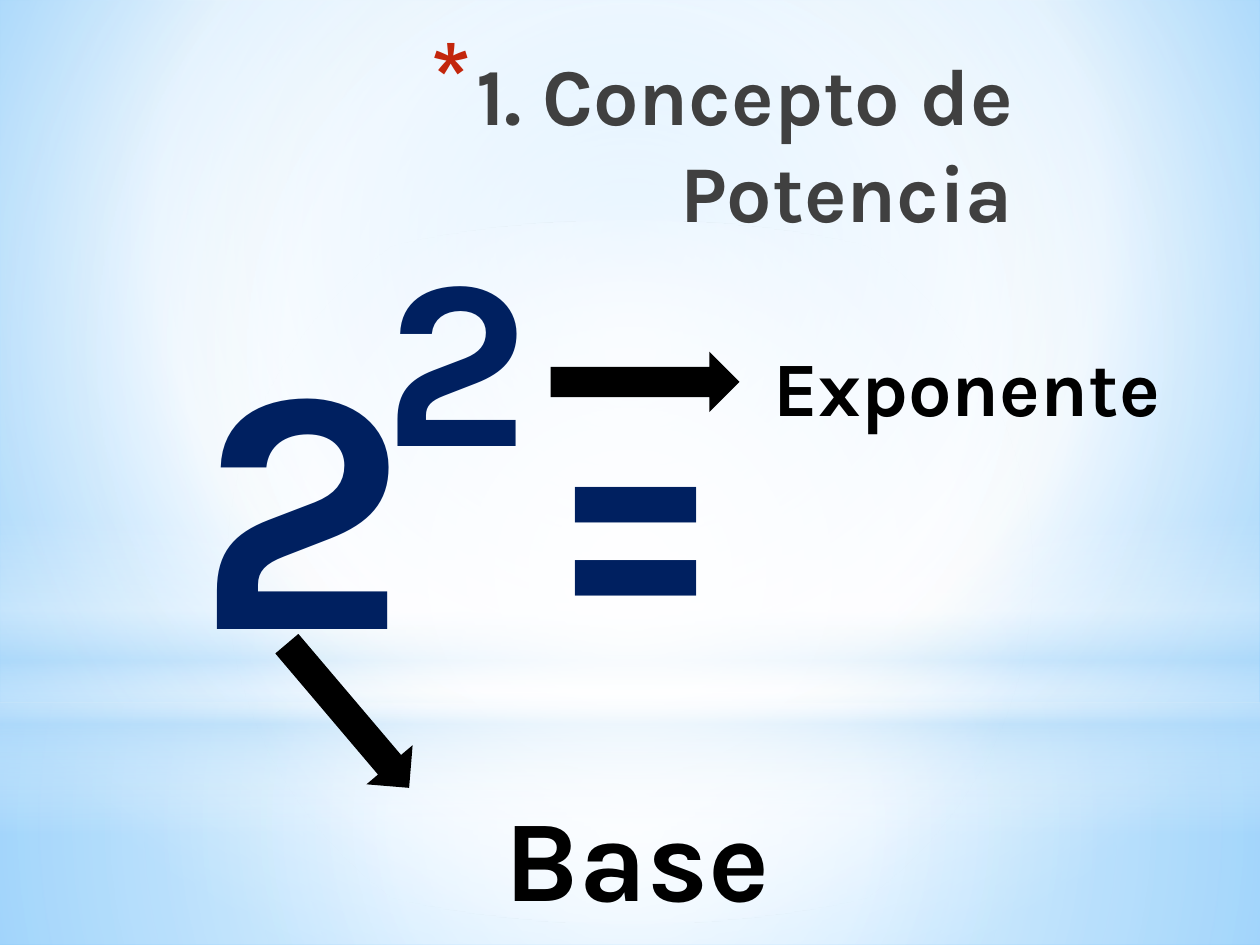
from lxml.etree import SubElement
from pptx import Presentation
from pptx.dml.color import RGBColor
from pptx.enum.shapes import MSO_SHAPE
from pptx.enum.text import MSO_ANCHOR, MSO_AUTO_SIZE, PP_ALIGN
from pptx.oxml.ns import qn
from pptx.util import Cm, Pt

COLORS = {
    "white": "FFFFFF",
    "pale": "B4DCFA",
    "sky": "9ED5FF",
    "azure": "5BB9FF",
    "gray": "404040",
    "red": "C3260C",
    "navy": "002060",
    "black": "000000",
}
WIDTH, HEIGHT = 25.4, 19.05
HORIZON = 14.17
CENTER = (50, 50, 50, 50)


class SlideBuilder:
    font = "Karla"

    def __init__(self, deck):
        self.page = deck.slides.add_slide(deck.slide_layouts[6])

    def color(self, name):
        return RGBColor.from_string(COLORS[name])

    def gradient(self, owner, fill, stops, focus=None):
        fill.solid()
        solid = next(owner.iter(qn("a:solidFill")))
        grad = SubElement(solid.getparent(), qn("a:gradFill"), rotWithShape="1")
        stop_list = SubElement(grad, qn("a:gsLst"))
        for position, name, alpha in stops:
            stop = SubElement(stop_list, qn("a:gs"), pos=str(position * 1000))
            tint = SubElement(stop, qn("a:srgbClr"), val=COLORS[name])
            if alpha < 100:
                SubElement(tint, qn("a:alpha"), val=str(alpha * 1000))
        if focus:
            route = SubElement(grad, qn("a:path"), path="circle")
            edges = {side: str(value * 1000) for side, value in zip("ltrb", focus)}
            SubElement(route, qn("a:fillToRect"), **edges)
        else:
            SubElement(grad, qn("a:lin"), ang="5400000", scaled="0")
        solid.getparent().replace(solid, grad)

    def background(self, stops, focus):
        self.gradient(self.page.element, self.page.background.fill, stops, focus)

    def shape(self, kind, left, top, width, height):
        shape = self.page.shapes.add_shape(
            kind, Cm(left), Cm(top), Cm(width), Cm(height)
        )
        shape.shadow.inherit = False
        shape.line.fill.background()
        return shape

    def glow(self, kind, top, height, stops, focus=None):
        shape = self.shape(kind, 0, top, WIDTH, height)
        self.gradient(shape.element, shape.fill, stops, focus)

    def arrow(self, left, top, rotation=0):
        shape = self.shape(MSO_SHAPE.RIGHT_ARROW, left, top, 3.81, 1.22)
        shape.fill.solid()
        shape.fill.fore_color.rgb = self.color("black")
        shape.rotation = rotation

    def text(self, words, left, top, width, height, size, color,
             align=PP_ALIGN.LEFT, fit=MSO_AUTO_SIZE.SHAPE_TO_FIT_TEXT):
        box = self.page.shapes.add_textbox(Cm(left), Cm(top), Cm(width), Cm(height))
        frame = box.text_frame
        frame.word_wrap = True
        frame.auto_size = fit
        frame.vertical_anchor = MSO_ANCHOR.TOP
        frame.text = words
        para = frame.paragraphs[0]
        para.alignment = align
        span = para.runs[0]
        span.font.name = self.font
        span.font.size = Pt(size)
        span.font.bold = True
        span.font.color.rgb = self.color(color)
        return para

    def title(self, words, left, top, width, height):
        para = self.text(words, left, top, width, height, 46, "gray",
                         PP_ALIGN.RIGHT, MSO_AUTO_SIZE.NONE)
        layout = para.runs[0].font._element.getparent().getparent().get_or_add_pPr()
        layout.set("marL", str(Cm(0.89)))
        layout.set("indent", str(Cm(-0.89)))
        bullet_color = SubElement(layout, qn("a:buClr"))
        SubElement(bullet_color, qn("a:srgbClr"), val=COLORS["red"])
        SubElement(layout, qn("a:buSzPct"), val="128000")
        SubElement(layout, qn("a:buChar"), char="*")


def main():
    deck = Presentation()
    deck.slide_width, deck.slide_height = Cm(WIDTH), Cm(HEIGHT)
    slide = SlideBuilder(deck)

    slide.background(
        [(0, "sky", 100), (60, "white", 100), (100, "azure", 100)], (20, 10, 20, 60)
    )
    slide.glow(MSO_SHAPE.RECTANGLE, HORIZON, HEIGHT - HORIZON,
               [(0, "white", 91), (37, "white", 76), (100, "pale", 79)], CENTER)
    slide.glow(MSO_SHAPE.RECTANGLE, 0, HORIZON,
               [(0, "white", 89), (48, "white", 62), (100, "pale", 79)], CENTER)
    slide.glow(MSO_SHAPE.RECTANGLE, 10.46, 6.35,
               [(0, "white", 0), (29, "white", 30), (45, "pale", 40),
                (55, "white", 26), (65, "pale", 60), (100, "white", 0)])
    slide.glow(MSO_SHAPE.OVAL, 4.45, HORIZON,
               [(0, "white", 100), (56, "white", 0)], CENTER)

    slide.title("1. Concepto de Potencia", 2.59, 0.79, 18.08, 3.18)
    slide.text("2", 3.71, 5.54, 4.19, 8.76, 199, "navy")
    slide.text("2", 7.49, 4.01, 4.19, 6.15, 138, "navy")
    slide.text("=", 10.69, 5.54, 4.19, 8.76, 199, "navy")
    slide.arrow(11.1, 7.09)
    slide.arrow(5.11, 13.82, 49.7)
    slide.text("Exponente", 15.29, 6.73, 8.41, 2.13, 44, "black", PP_ALIGN.CENTER)
    slide.text("Base", 8.64, 15.72, 8.41, 3.07, 66, "black", PP_ALIGN.CENTER)

    deck.save("out.pptx")


if __name__ == "__main__":
    main()
